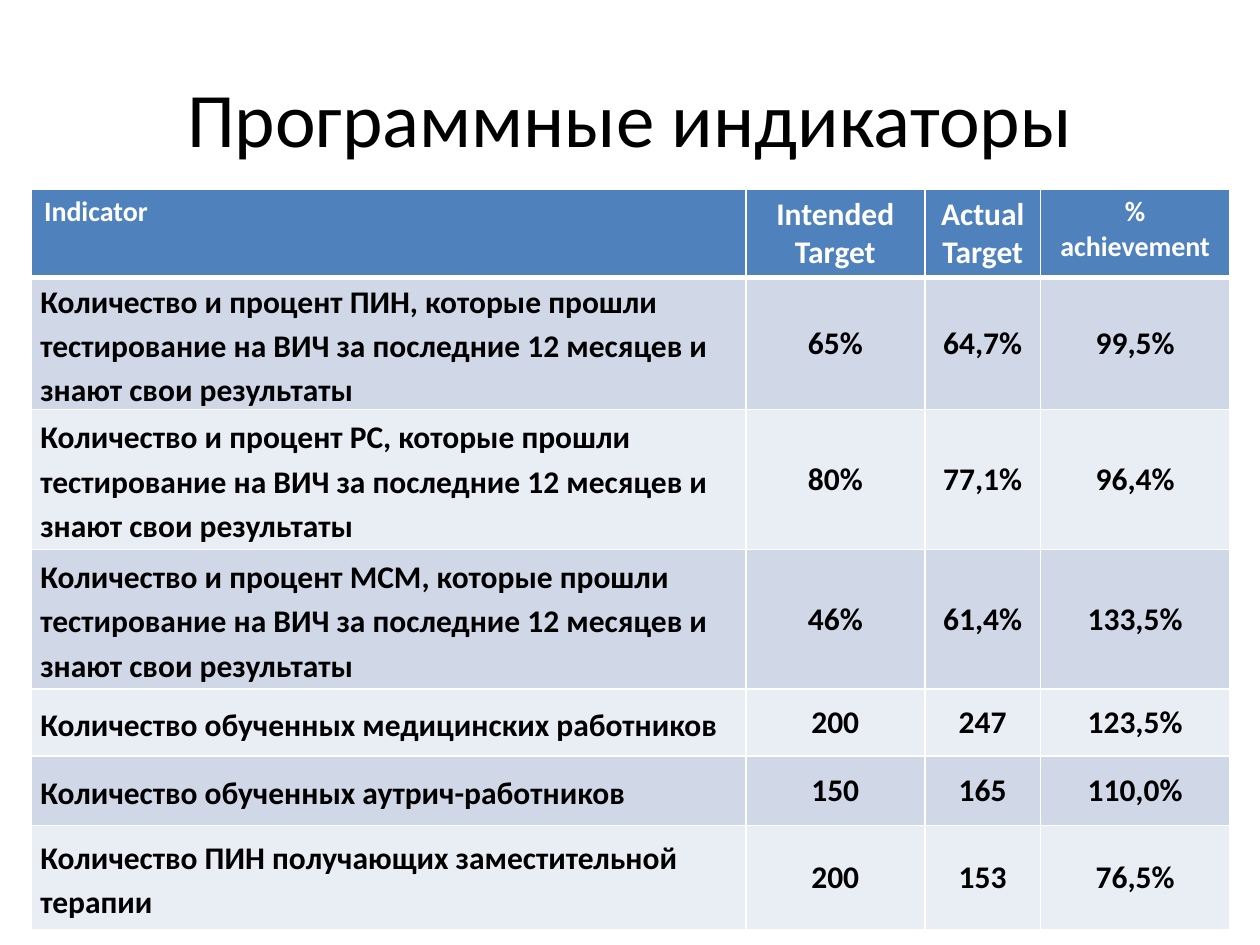
import pptx
import pptx.dml.color
import pptx.enum.text
import pptx.oxml.ns
import pptx.util
import lxml.etree

THEME = {
    "font": "Calibri", "text": "000000", "light": "FFFFFF",
    "header": "4F81BD", "bands": ("D0D8E8", "E9EDF4"),
    "title_size": 44, "body_size": 18, "small_size": 16,
    "rule": 1, "header_rule": 3,
}
ALIGN = pptx.enum.text.PP_ALIGN
ANCHOR = pptx.enum.text.MSO_ANCHOR


def style(p, size, color, bold, align):
    p.alignment = align
    p.font.name = THEME["font"]
    p.font.size = pptx.util.Pt(size)
    p.font.bold = bold
    p.font.color.rgb = pptx.dml.color.RGBColor.from_string(color)


def border(cell, side, width):
    qn = pptx.oxml.ns.qn
    ln = lxml.etree.SubElement(cell._tc.get_or_add_tcPr(), qn("a:" + side),
                               w=str(pptx.util.Pt(width)))
    fill = lxml.etree.SubElement(ln, qn("a:solidFill"))
    lxml.etree.SubElement(fill, qn("a:srgbClr"), val=THEME["light"])


prs = pptx.Presentation()
prs.slide_width = pptx.util.Inches(10)
prs.slide_height = pptx.util.Inches(7.5)
s = prs.slides.add_slide(prs.slide_layouts[6])
col = prs.slide_width // 1000
row = prs.slide_height // 750

sp = s.shapes.add_textbox(50 * col, 30 * row, 900 * col, 125 * row)
tf = sp.text_frame
tf.word_wrap = True
tf.vertical_anchor = ANCHOR.MIDDLE
tf.text = "Программные индикаторы"
style(tf.paragraphs[0], THEME["title_size"], THEME["text"], False, ALIGN.CENTER)

tested = "Количество и процент {}, которые прошли тестирование на ВИЧ за последние 12 месяцев и знают свои результаты"
rows = [
    ("Indicator", "Intended Target", "Actual Target", "% achievement"),
    (tested.format("ПИН"), "65%", "64,7%", "99,5%"),
    (tested.format("РС"), "80%", "77,1%", "96,4%"),
    (tested.format("МСМ"), "46%", "61,4%", "133,5%"),
    ("Количество обученных медицинских работников", "200", "247", "123,5%"),
    ("Количество обученных аутрич-работников", "150", "165", "110,0%"),
    ("Количество ПИН получающих заместительной терапии", "200", "153", "76,5%"),
]
widths = [567, 142, 92, 150]
heights = [70, 105, 111, 111, 53, 55, 83]
table = s.shapes.add_table(len(rows), len(widths), 25 * col, 150 * row,
                           sum(widths) * col, sum(heights) * row).table
for column, width in zip(table.columns, widths):
    column.width = width * col
for line, height in zip(table.rows, heights):
    line.height = height * row

for i, values in enumerate(rows):
    header = i == 0
    for j, value in enumerate(values):
        cell = table.cell(i, j)
        cell.text = value
        p = cell.text_frame.paragraphs[0]
        small = header and j in (0, 3)
        style(p, THEME["small_size" if small else "body_size"],
              THEME["light" if header else "text"], True,
              ALIGN.LEFT if j == 0 else ALIGN.CENTER)
        if not header:
            cell.vertical_anchor = ANCHOR.MIDDLE
            cell.margin_top = cell.margin_bottom = 0
            cell.margin_left = cell.margin_right = 7 * col if j == 0 else 0
            if j == 0:
                p.line_spacing = 1.15
        for side in ("lnL", "lnR", "lnT", "lnB"):
            thick = (i, side) in ((0, "lnB"), (1, "lnT"))
            border(cell, side, THEME["header_rule" if thick else "rule"])
        cell.fill.solid()
        cell.fill.fore_color.rgb = pptx.dml.color.RGBColor.from_string(
            THEME["header"] if header else THEME["bands"][(i - 1) % 2])

prs.save("out.pptx")
